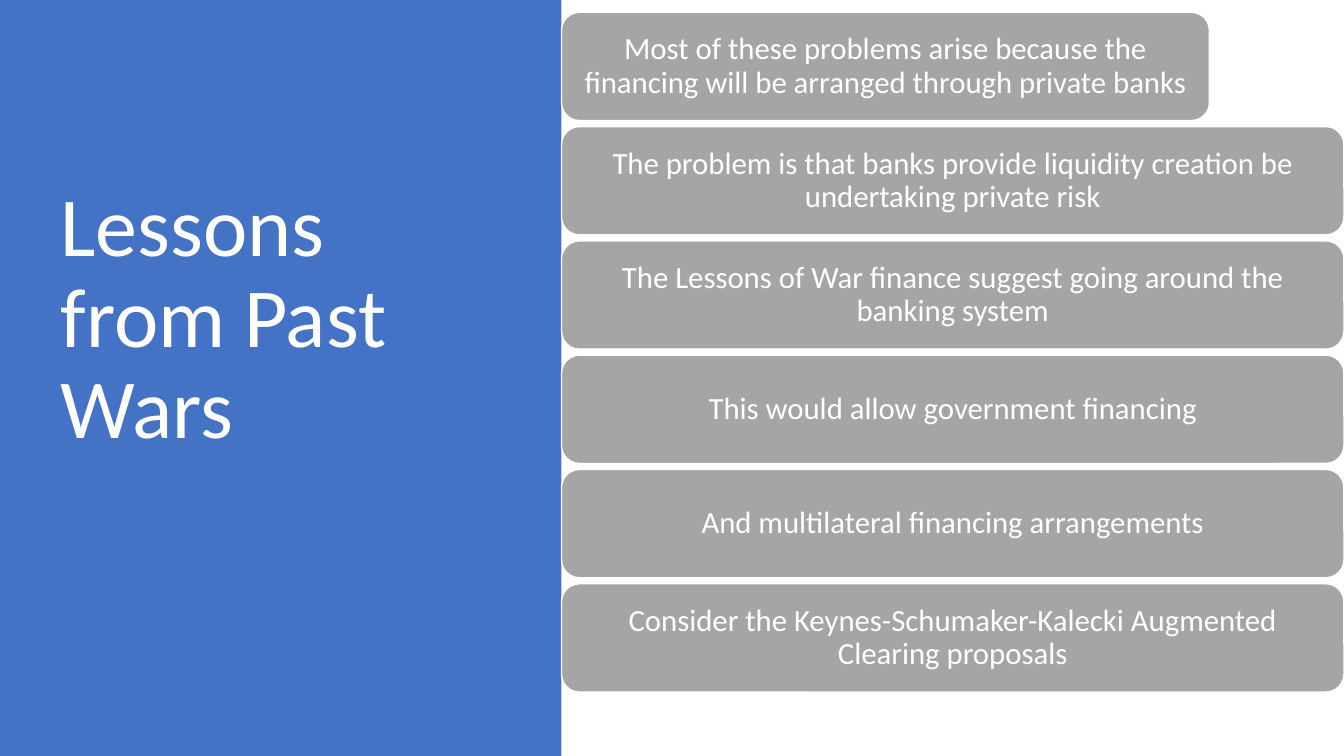
from pptx import Presentation
from pptx.dml.color import RGBColor
from pptx.enum.shapes import MSO_SHAPE as Preset
from pptx.enum.text import MSO_ANCHOR as Anchor, MSO_AUTO_SIZE as AutoSize, PP_ALIGN as Align
from pptx.util import Cm, Pt

COLOURS = {"panel": "4472C4", "card": "A5A5A5", "white": "FFFFFF"}
SLIDE_WIDTH, SLIDE_HEIGHT = 33.87, 19.05
PANEL_WIDTH = 14.15
CARD_TOP, CARD_HEIGHT, CARD_STEP = 0.31, 2.73, 2.88
FIRST_CARD_WIDTH = 16.33

LESSONS = [
    "Most of these problems arise because the financing will be arranged through private banks",
    "The problem is that banks provide liquidity creation be undertaking private risk",
    "The Lessons of War finance suggest going around the banking system",
    "This would allow government financing",
    "And multilateral financing arrangements",
    "Consider the Keynes-Schumaker-Kalecki Augmented Clearing proposals",
]


def colour(name):
    return RGBColor.from_string(COLOURS[name])


def set_attributes(target, values):
    for name, value in values.items():
        setattr(target, name, value)


def place(shape, left, top, width, height):
    set_attributes(shape, {"left": Cm(left), "top": Cm(top),
                           "width": Cm(width), "height": Cm(height)})


def write_text(shape, text, size, alignment):
    frame = shape.text_frame
    set_attributes(frame, {"text": text, "word_wrap": True,
                           "auto_size": AutoSize.NONE,
                           "vertical_anchor": Anchor.MIDDLE})
    paragraph = frame.paragraphs[0]
    set_attributes(paragraph, {"alignment": alignment, "line_spacing": 0.9})
    font = paragraph.runs[0].font
    set_attributes(font, {"name": "Calibri", "size": Pt(size)})
    font.color.rgb = colour("white")


def add_block(slide, preset, box, fill):
    shape = slide.shapes.add_shape(preset, *map(Cm, box))
    shape.shadow.inherit = False
    shape.fill.solid()
    shape.fill.fore_color.rgb = colour(fill)
    shape.line.fill.background()
    return shape


def add_card(slide, index, text):
    width = FIRST_CARD_WIDTH if index == 0 else SLIDE_WIDTH - PANEL_WIDTH
    box = (PANEL_WIDTH, CARD_TOP + index * CARD_STEP, width, CARD_HEIGHT)
    card = add_block(slide, Preset.ROUNDED_RECTANGLE, box, "card")
    card.line.color.rgb = colour("white")
    card.line.width = Pt(1)
    set_attributes(card.text_frame, {"margin_left": Cm(0.23), "margin_right": Cm(0.23),
                                     "margin_top": Cm(0.13), "margin_bottom": Cm(0.13)})
    write_text(card, text, 22, Align.CENTER)


def main():
    presentation = Presentation()
    set_attributes(presentation, {"slide_width": Cm(SLIDE_WIDTH),
                                  "slide_height": Cm(SLIDE_HEIGHT)})
    slide = presentation.slides.add_slide(presentation.slide_layouts[5])

    # Blue panel behind the title
    panel = add_block(slide, Preset.RECTANGLE, (0, 0, PANEL_WIDTH, SLIDE_HEIGHT), "panel")
    title = slide.shapes.title
    title.element.addprevious(panel.element)
    place(title, 1.27, 1.45, 11.02, 13.23)
    write_text(title, "Lessons from Past Wars", 60, Align.LEFT)

    # Stack of lesson cards
    for index, text in enumerate(LESSONS):
        add_card(slide, index, text)

    presentation.save("out.pptx")


if __name__ == "__main__":
    main()
